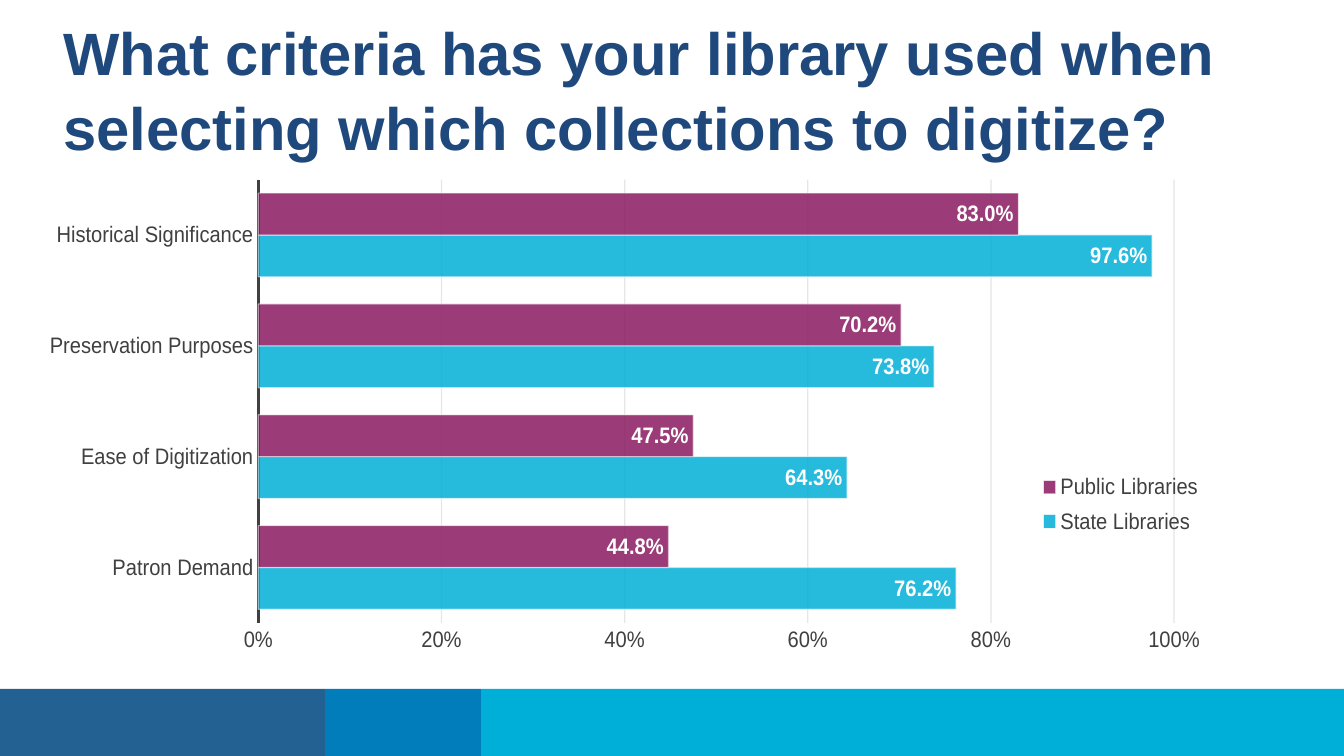
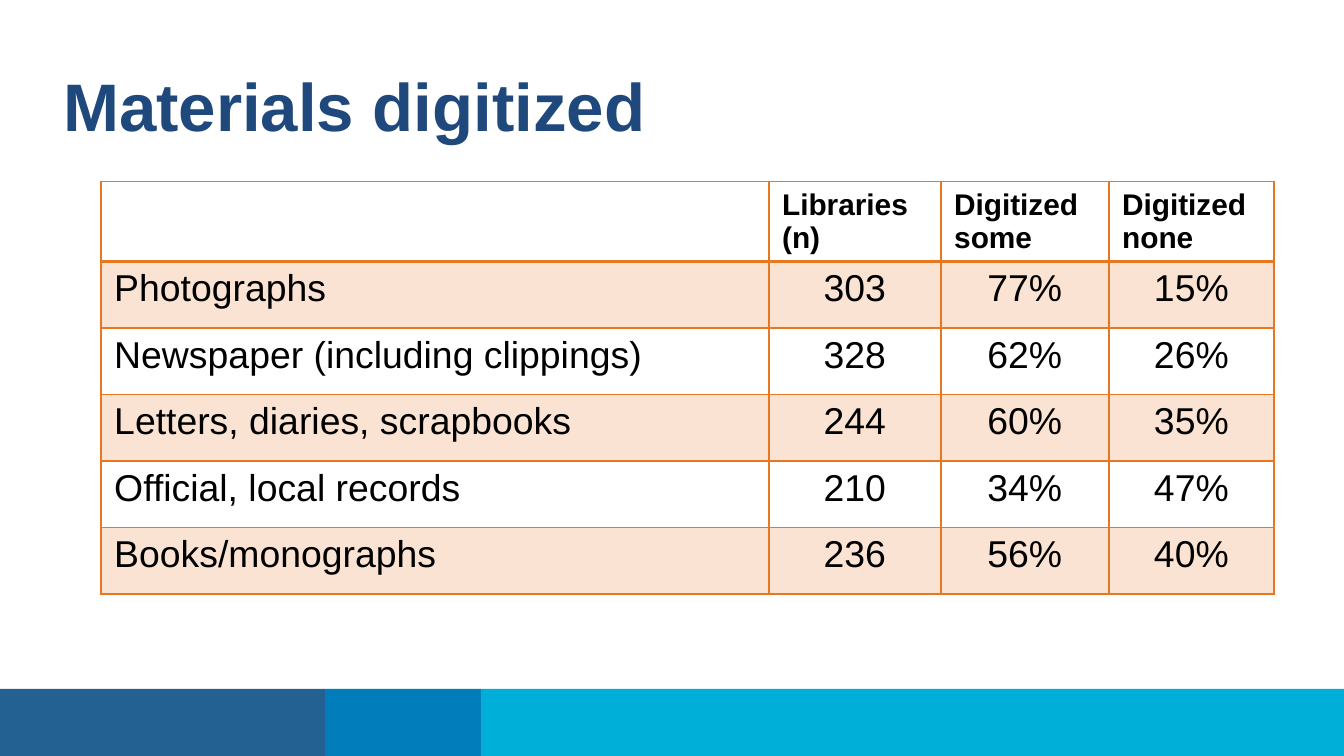
from dataclasses import dataclass
from typing import NamedTuple

from lxml import etree
from pptx import Presentation
from pptx import util as u
from pptx.chart.data import CategoryChartData
from pptx.dml.color import RGBColor
from pptx.enum import chart as ch
from pptx.enum import shapes, text
from pptx.oxml.ns import qn


# Theme: colours, font and type sizes
@dataclass(frozen=True)
class Theme:
    font: str = "Arial"
    title: str = "1F497D"
    navy: str = "236192"
    blue: str = "007DBA"
    cyan: str = "00AFD7"
    plum: str = "8A1B61"
    orange: str = "E87722"
    grey: str = "404040"
    grid: str = "0D0D0D"
    black: str = "000000"
    white: str = "FFFFFF"
    title_long: int = 32
    title_short: int = 36
    cell: int = 20
    header: int = 16
    chart: int = 12


THEME = Theme()

# Grid: square cells, 100 to the slide's width
SLIDE_W, SLIDE_H = u.Inches(10), u.Inches(5.625)
CELL = SLIDE_W / 100


def grid(cells: float) -> u.Emu:
    return u.Emu(round(cells * CELL))


class Box(NamedTuple):
    left: float
    top: float
    width: float
    height: float

    def emu(self) -> tuple:
        return tuple(grid(n) for n in self)


class Band(NamedTuple):
    width: float
    color: str


class Series(NamedTuple):
    name: str
    color: str
    values: tuple


BAND_TOP, BAND_H = 51.25, 5
BANDS = (Band(24.2, THEME.navy), Band(11.6, THEME.blue), Band(64.2, THEME.cyan))

CHART_BOX = Box(3.7, 5.6, 86.3, 46.8)
# Shares of the chart's own size
PLOT_SHARE = Box(0.088, 0.166, 0.878, 0.705)
LEGEND_SHARE = Box(0.835, 0.62, 0.16, 0.125)
CRITERIA = ("Patron Demand", "Ease of Digitization",
            "Preservation Purposes", "Historical Significance")
SERIES = (
    Series("State Libraries", THEME.cyan, (0.762, 0.643, 0.738, 0.976)),
    Series("Public Libraries", THEME.plum, (0.448, 0.475, 0.702, 0.83)),
)

TABLE_LEFT, TABLE_TOP, ROW_H = 7.5, 13.5, 4.95
COL_WIDTHS = (49.7, 12.8, 12.5, 12.3)
MATERIALS = (
    ("", "Libraries (n)", "Digitized some", "Digitized none"),
    ("Photographs", "303", "77%", "15%"),
    ("Newspaper (including clippings)", "328", "62%", "26%"),
    ("Letters, diaries, scrapbooks", "244", "60%", "35%"),
    ("Official, local records", "210", "34%", "47%"),
    ("Books/monographs", "236", "56%", "40%"),
)


# Formatting helpers
def set_font(font, size: float, color: str, bold: bool = False) -> None:
    font.name, font.size, font.bold = THEME.font, u.Pt(size), bold
    font.color.rgb = RGBColor.from_string(color)


def set_fill(fill, color: str, alpha: int = 100) -> None:
    fill.solid()
    fill.fore_color.rgb = RGBColor.from_string(color)
    if alpha < 100:
        clr = fill.fore_color._xFill[0]
        etree.SubElement(clr, qn("a:alpha"), val=str(alpha * 1000))


def set_line(line, color: str, width: float, alpha: int = 100) -> None:
    line.width = u.Pt(width)
    set_fill(line.fill, color, alpha)


def set_layout(parent, index: int, share: Box, inner: bool = False) -> None:
    for old in parent.findall(qn("c:layout")):
        parent.remove(old)
    layout = etree.Element(qn("c:layout"))
    manual = etree.SubElement(layout, qn("c:manualLayout"))
    settings = {"layoutTarget": "inner"} if inner else {}
    settings |= {"xMode": "edge", "yMode": "edge"}
    settings |= dict(zip("xywh", map(str, share)))
    for tag, val in settings.items():
        etree.SubElement(manual, qn(f"c:{tag}"), val=val)
    parent.insert(index, layout)


def set_borders(cell, color: str, top: float, bottom: float) -> None:
    tcPr = cell._tc.get_or_add_tcPr()
    widths = {"lnL": 1, "lnR": 1, "lnT": top, "lnB": bottom}
    for i, (tag, width) in enumerate(widths.items()):
        ln = etree.Element(qn(f"a:{tag}"), w=str(u.Pt(width)))
        solid = etree.SubElement(ln, qn("a:solidFill"))
        etree.SubElement(solid, qn("a:srgbClr"), val=color)
        tcPr.insert(i, ln)


# Slide frame: footer bands and title
def add_slide(prs, title: str, top: float, size: int):
    s = prs.slides.add_slide(prs.slide_layouts[5])
    left = 0.0
    for band in BANDS:
        box = Box(left, BAND_TOP, band.width, BAND_H)
        sp = s.shapes.add_shape(shapes.MSO_SHAPE.RECTANGLE, *box.emu())
        sp.shadow.inherit = False
        set_fill(sp.fill, band.color)
        sp.line.fill.background()
        left += band.width

    sp = s.shapes.title
    sp.left, sp.top, sp.width, sp.height = Box(3.7, top, 92.3, 7.5).emu()
    tf = sp.text_frame
    tf.text = title
    tf.word_wrap = True
    tf.auto_size = text.MSO_AUTO_SIZE.NONE
    tf.vertical_anchor = text.MSO_ANCHOR.TOP
    tf.margin_top = grid(0.7)
    p = tf.paragraphs[0]
    p.alignment = text.PP_ALIGN.LEFT
    p.line_spacing = 1.05
    set_font(p.font, size, THEME.title, True)
    return s


# Clustered bar chart of selection criteria
def add_criteria_chart(s) -> None:
    data = CategoryChartData(number_format="0.0%")
    data.categories = CRITERIA
    for series in SERIES:
        data.add_series(series.name, series.values)
    chart = s.shapes.add_chart(
        ch.XL_CHART_TYPE.BAR_CLUSTERED, *CHART_BOX.emu(), data).chart
    chart.has_title = False
    set_font(chart.font, THEME.chart, THEME.grey)

    plot = chart.plots[0]
    plot.gap_width, plot.overlap, plot.vary_by_categories = 65, 0, False
    for series, ser in zip(SERIES, plot.series):
        set_fill(ser.format.fill, series.color, 85)
        set_line(ser.format.line, THEME.white, 0.75, 50)
        labels = ser.data_labels
        labels.show_value = True
        labels.position = ch.XL_LABEL_POSITION.INSIDE_END
        labels.number_format = "0.0%"
        labels.number_format_is_linked = False
        set_font(labels.font, THEME.chart, THEME.white, True)

    cat, val = chart.category_axis, chart.value_axis
    for axis in (cat, val):
        axis.major_tick_mark = axis.minor_tick_mark = ch.XL_TICK_MARK.NONE
        set_font(axis.tick_labels.font, THEME.chart, THEME.grey)
    cat.has_major_gridlines = False
    set_line(cat.format.line, THEME.grey, 1.5)
    val.minimum_scale, val.maximum_scale, val.major_unit = 0, 1, 0.2
    val.tick_labels.number_format = "0%"
    val.tick_labels.number_format_is_linked = False
    val.format.line.fill.background()
    val.has_major_gridlines = True
    set_line(val.major_gridlines.format.line, THEME.grid, 0.75, 10)

    chart.has_legend = True
    legend = chart.legend
    legend.position = ch.XL_LEGEND_POSITION.RIGHT
    legend.include_in_layout = False
    set_font(legend.font, THEME.chart, THEME.grey)
    set_layout(legend._element, 1, LEGEND_SHARE)
    plot_area = chart._chartSpace.chart.plotArea
    set_layout(plot_area, 0, PLOT_SHARE, inner=True)


# Table of materials
def add_materials_table(s) -> None:
    box = Box(TABLE_LEFT, TABLE_TOP, sum(COL_WIDTHS), ROW_H * len(MATERIALS))
    table = s.shapes.add_table(
        len(MATERIALS), len(COL_WIDTHS), *box.emu()).table
    table.first_row = table.horz_banding = False
    for column, width in zip(table.columns, COL_WIDTHS):
        column.width = grid(width)
    for r, row in enumerate(MATERIALS):
        header = r == 0
        for c, value in enumerate(row):
            cell = table.cell(r, c)
            cell.text = value
            p = cell.text_frame.paragraphs[0]
            set_font(p.font, THEME.header if header else THEME.cell,
                     THEME.black, header)
            if c and not header:
                p.alignment = text.PP_ALIGN.CENTER
            if r % 2:
                set_fill(cell.fill, THEME.orange, 20)
            else:
                cell.fill.background()
            set_borders(cell, THEME.orange, top=2 if r == 1 else 1,
                        bottom=2 if header else 1)


def main() -> None:
    prs = Presentation()
    prs.slide_width, prs.slide_height = SLIDE_W, SLIDE_H
    s = add_slide(prs, "What criteria has your library used when selecting "
                       "which collections to digitize?", 0.2, THEME.title_long)
    add_criteria_chart(s)
    s = add_slide(prs, "Materials digitized", 3.8, THEME.title_short)
    add_materials_table(s)
    prs.save("out.pptx")


if __name__ == "__main__":
    main()
